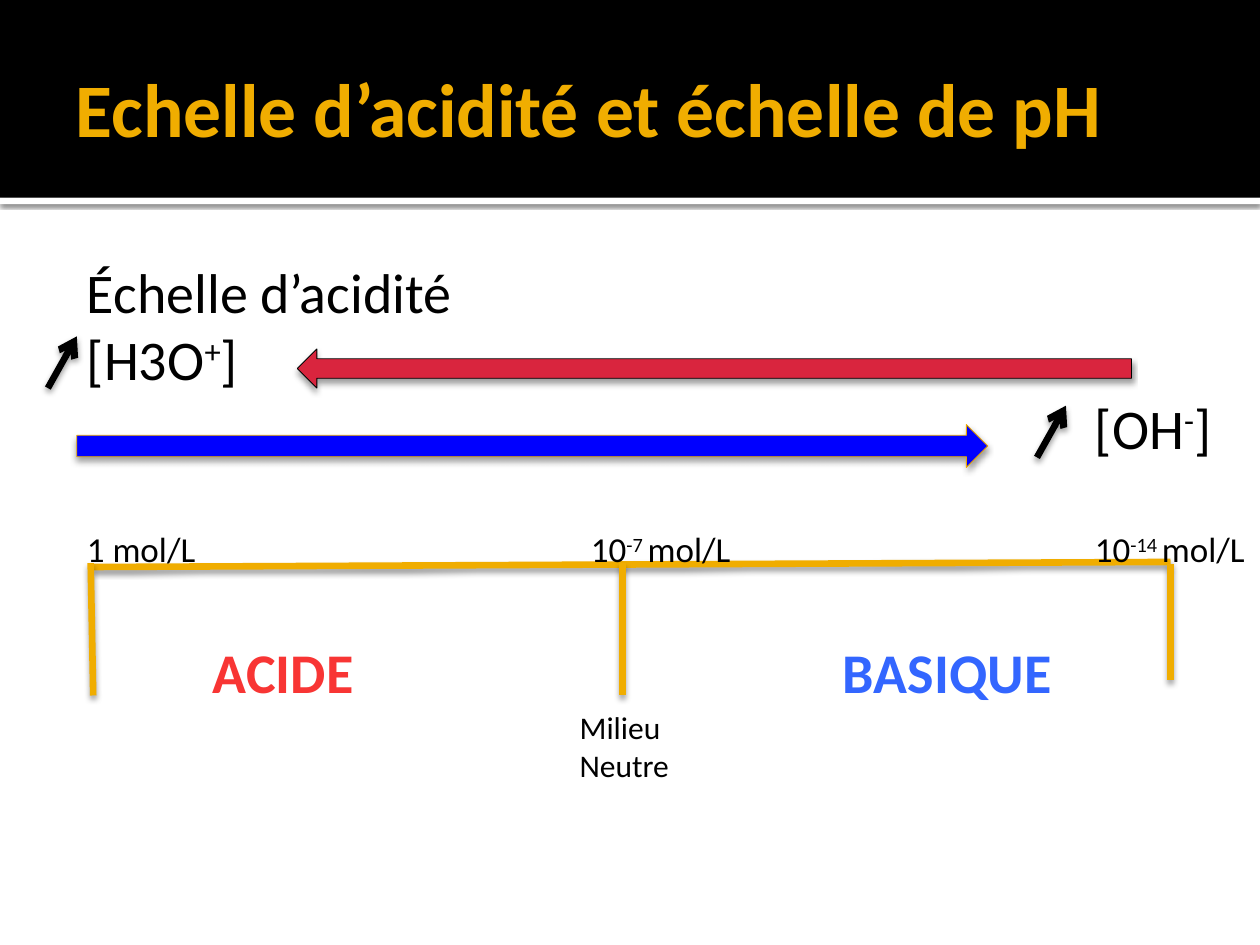
import pptx
import pptx.util
import pptx.dml.color
import pptx.enum.shapes
import pptx.enum.text
import pptx.oxml
import pptx.oxml.ns
from lxml import etree

Inches = pptx.util.Inches
Pt = pptx.util.Pt
SHAPES = pptx.enum.shapes.MSO_SHAPE
GOLD = "F0AD00"
BLACK = "000000"
COLUMN_LEFT = 0.69


def color(value):
    return pptx.dml.color.RGBColor.from_string(value)


def add_element(parent, tag, **attributes):
    element = etree.SubElement(parent, pptx.oxml.ns.qn(tag))
    for name, value in attributes.items():
        element.set(name, str(value))
    return element


def add_shadow(shape, blur=3.5, distance=2, opacity=38):
    effects = add_element(shape._element.spPr, "a:effectLst")
    shadow = add_element(effects, "a:outerShdw", blurRad=Pt(blur), dist=Pt(distance),
                         dir=5400000, rotWithShape=0)
    shade = add_element(shadow, "a:srgbClr", val=BLACK)
    add_element(shade, "a:alpha", val=opacity * 1000)


def add_block(page, kind, left, top, width, height, fill, outline=None):
    block = page.shapes.add_shape(kind, Inches(left), Inches(top), Inches(width), Inches(height))
    block.fill.solid()
    block.fill.fore_color.rgb = color(fill)
    if outline:
        block.line.color.rgb = color(outline)
        block.line.width = Pt(0.5)
    else:
        block.line.fill.background()
    return block


def add_line(page, start, end, stroke, arrow=False):
    line = page.shapes.add_connector(pptx.enum.shapes.MSO_CONNECTOR.STRAIGHT,
                                     *(Inches(value) for value in start + end))
    line.line.color.rgb = color(stroke)
    line.line.width = Pt(3.78)
    if arrow:
        add_element(line.line._get_or_add_ln(), "a:tailEnd", type="arrow")
    add_shadow(line)


def add_label(page, left, top, width, height, lines, size, fill=BLACK, bold=False, middle=False):
    box = page.shapes.add_textbox(Inches(left), Inches(top), Inches(width), Inches(height))
    frame = box.text_frame
    frame.word_wrap = True
    frame.margin_left = frame.margin_right = frame.margin_top = frame.margin_bottom = 0
    if middle:
        frame.vertical_anchor = pptx.enum.text.MSO_ANCHOR.MIDDLE
    for index, pieces in enumerate(lines):
        para = frame.paragraphs[0] if index == 0 else frame.add_paragraph()
        for position, piece in enumerate(pieces):
            span = para.add_run()
            span.text = piece
            span.font.name = "Calibri"
            span.font.size = Pt(size)
            span.font.bold = bold
            span.font.color.rgb = color(fill)
            if position == 1:
                span._r.get_or_add_rPr().set("baseline", "30000")


def add_header(page):
    strip = add_block(page, SHAPES.RECTANGLE, 0, 1.57, 10, 0.05, "FFFFFF")
    add_shadow(strip, 2.5, 0.8, 60)
    band = add_block(page, SHAPES.RECTANGLE, 0, 0, 10, 1.57, BLACK)
    band.shadow.inherit = False
    add_label(page, 0.6, 0.22, 9.25, 1.27, [["Echelle d’acidité et échelle de pH"]],
              43.2, GOLD, bold=True, middle=True)


def add_scale(page):
    add_line(page, (0.74, 4.5), (9.29, 4.46), GOLD)
    ticks = [((0.72, 4.47), (0.74, 5.52)), ((4.94, 4.47), (4.94, 5.52)), ((9.29, 4.48), (9.29, 5.4))]
    for start, end in ticks:
        add_line(page, start, end, GOLD)
    values = [["1 mol/L"], ["10", "-7 ", "mol/L"], ["10", "-14 ", "mol/L"]]
    for index, pieces in enumerate(values):
        add_label(page, COLUMN_LEFT + 4 * index, 4.19, 1.3, 0.34, [pieces], 20)
    for offset, name, fill in [(1, "ACIDE", "F83534"), (6, "BASIQUE", "3366FF")]:
        add_label(page, COLUMN_LEFT + offset, 5.06, 2, 0.54, [[name]], 32, fill, bold=True)
    add_label(page, 4.6, 5.62, 0.85, 0.61, [["Milieu"], ["Neutre"]], 18)


def add_concentrations(page):
    add_label(page, COLUMN_LEFT, 2.04, 4, 1.08,
              [["Échelle d’acidité"], ["[H3O", "+", "]"]], 32)
    add_label(page, COLUMN_LEFT + 8, 3.12, 1.2, 0.54, [["[OH", "-", "]"]], 32)
    arrows = [(SHAPES.LEFT_ARROW, 2.36, 2.77, 6.62, 0.31, "D9253E", BLACK),
              (SHAPES.RIGHT_ARROW, 0.61, 3.37, 7.23, 0.34, "0000FF", "EBA900")]
    for arrow in arrows:
        add_shadow(add_block(page, *arrow), 3.1)
    for left, bottom in [(0.38, 3.08), (8.23, 3.63)]:
        add_line(page, (left, bottom), (left + 0.23, bottom - 0.41), BLACK, arrow=True)


def main():
    deck = pptx.Presentation()
    deck.slide_width = Inches(10)
    deck.slide_height = Inches(7.5)
    page = deck.slides.add_slide(deck.slide_layouts[6])
    add_header(page)
    add_scale(page)
    add_concentrations(page)
    deck.save("out.pptx")


if __name__ == "__main__":
    main()
